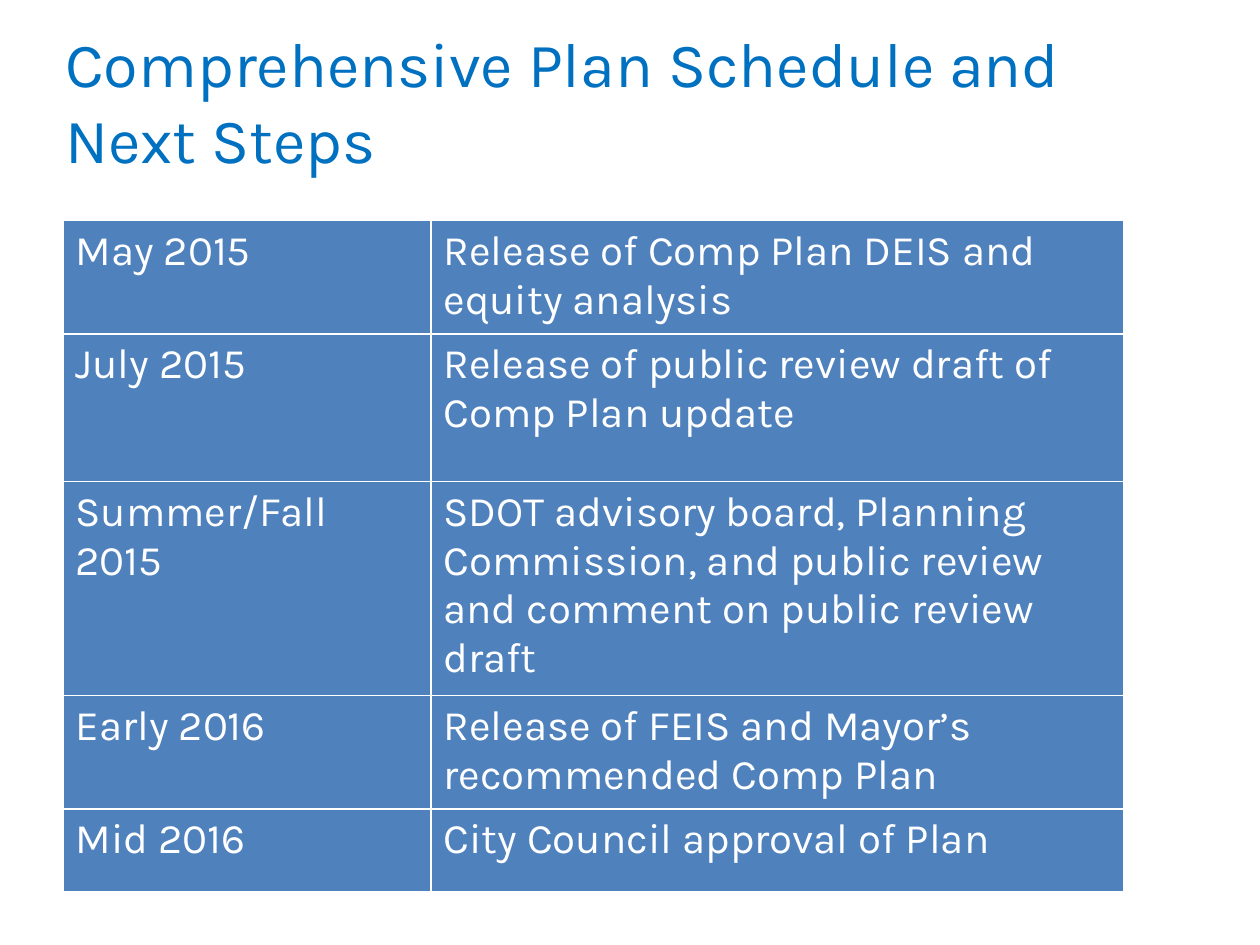
from typing import NamedTuple

from lxml.etree import SubElement
from pptx import Presentation
from pptx.dml.color import RGBColor as Rgb
from pptx.enum.text import MSO_ANCHOR as Anchor
from pptx.oxml.ns import qn
from pptx.util import Inches, Pt

FONT = "Karla"
WHITE, BLUE, FILL = "FFFFFF", "0070C0", "4F81BD"


class Step(NamedTuple):
    date: str
    event: str
    height: float


STEPS = [
    Step("May 2015", "Release of Comp Plan DEIS and equity analysis", 0.87),
    Step("July 2015", "Release of public review draft of Comp Plan update", 1.17),
    Step("Summer/Fall 2015", "SDOT advisory board, Planning Commission, and public "
         "review and comment on public review draft", 1.65),
    Step("Early 2016", "Release of FEIS and Mayor’s recommended Comp Plan", 0.88),
    Step("Mid 2016", "City Council approval of Plan", 0.66),
]
WIDTHS = [2.92, 5.5]


def paint(target, color: str) -> None:
    target.rgb = Rgb.from_string(color)


def write(frame, text: str, size: int, color: str) -> None:
    run = frame.paragraphs[0].add_run()
    run.text = text
    run.font.name = FONT
    run.font.size = Pt(size)
    paint(run.font.color, color)


def border(cell, color: str, width: float) -> None:
    props = cell._tc.get_or_add_tcPr()
    for place, side in enumerate(("lnL", "lnR", "lnT", "lnB")):
        line = SubElement(props, qn(f"a:{side}"), w=str(Pt(width)))
        solid = SubElement(line, qn("a:solidFill"))
        SubElement(solid, qn("a:srgbClr"), val=color)
        props.insert(place, line)


def draw_cell(cell, text: str) -> None:
    cell.fill.solid()
    paint(cell.fill.fore_color, FILL)
    border(cell, WHITE, 1)
    write(cell.text_frame, text, 24, WHITE)


def draw_title(slide, text: str) -> None:
    box = slide.shapes.add_textbox(Inches(0.42), Inches(-0.01), Inches(9.08), Inches(1.61))
    frame = box.text_frame
    frame.word_wrap = True
    frame.vertical_anchor = Anchor.MIDDLE
    write(frame, text, 36, BLUE)


def draw_table(slide, steps: list[Step]) -> None:
    high = sum(step.height for step in steps)
    table = slide.shapes.add_table(len(steps), len(WIDTHS), Inches(0.5), Inches(1.75),
                                   Inches(sum(WIDTHS)), Inches(high)).table
    table.first_row = table.horz_banding = False
    for col, width in zip(table.columns, WIDTHS):
        col.width = Inches(width)
    for row, step in zip(table.rows, steps):
        row.height = Inches(step.height)
        for cell, text in zip(row.cells, (step.date, step.event)):
            draw_cell(cell, text)


def main() -> None:
    """Build the plan schedule slide."""
    deck = Presentation()
    deck.slide_width, deck.slide_height = Inches(10), Inches(7.5)
    slide = deck.slides.add_slide(deck.slide_layouts[6])
    draw_title(slide, "Comprehensive Plan Schedule and Next Steps")
    draw_table(slide, STEPS)
    deck.save("out.pptx")


if __name__ == "__main__":
    main()
